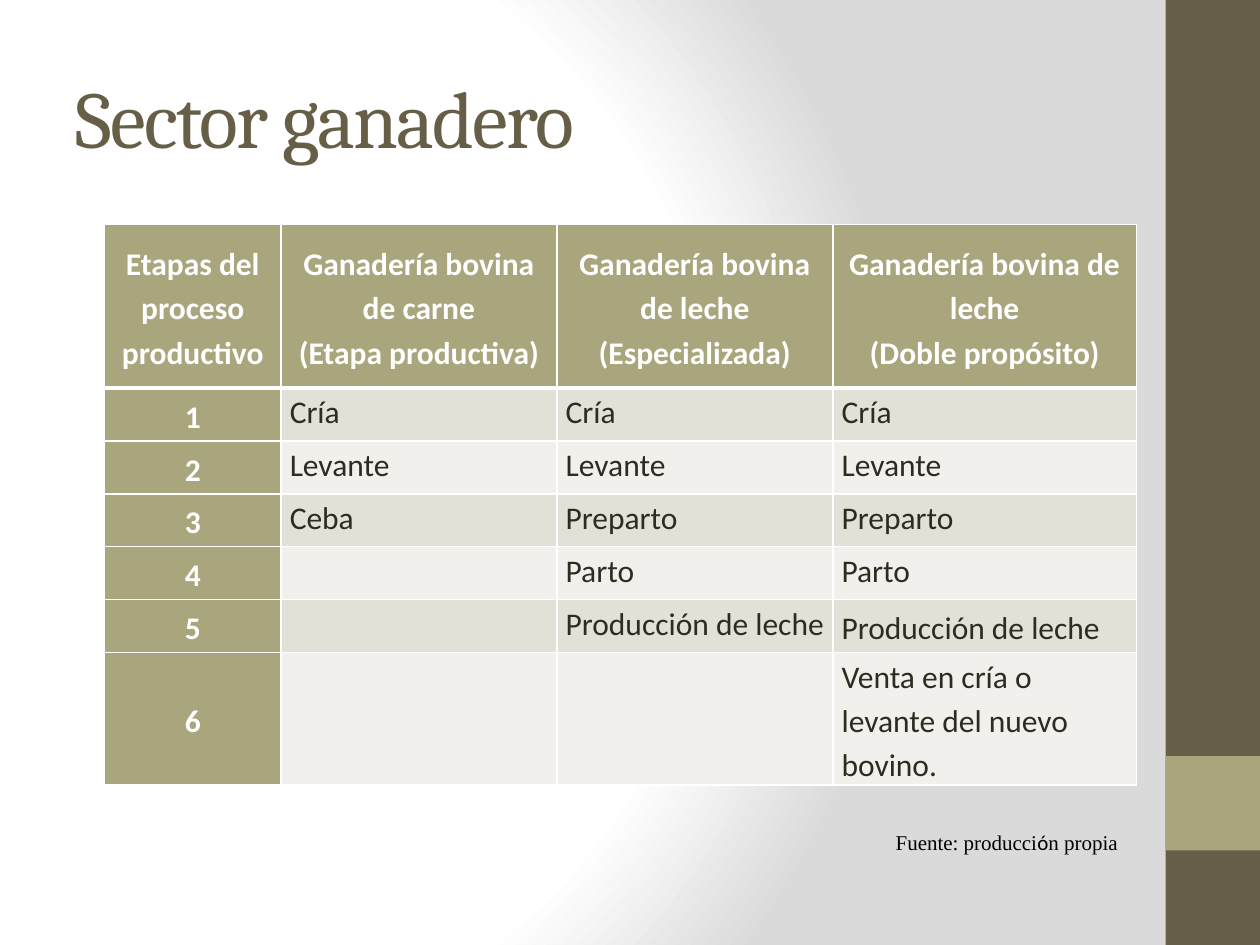
from pptx import Presentation
from pptx.dml.color import RGBColor
from pptx.enum.shapes import MSO_SHAPE
from pptx.enum.text import MSO_ANCHOR, MSO_AUTO_SIZE, PP_ALIGN
from pptx.oxml import parse_xml
from pptx.oxml.ns import nsdecls, qn
from pptx.util import Inches, Pt

RECT = MSO_SHAPE.RECTANGLE
TOP, MIDDLE = MSO_ANCHOR.TOP, MSO_ANCHOR.MIDDLE
LEFT, CENTER = PP_ALIGN.LEFT, PP_ALIGN.CENTER
RIGHT, JUSTIFY = PP_ALIGN.RIGHT, PP_ALIGN.JUSTIFY

BROWN = RGBColor(0x67, 0x5E, 0x47)
OLIVE = RGBColor(0xA9, 0xA5, 0x7C)
INK = RGBColor(0x2F, 0x2B, 0x20)
WHITE = RGBColor(0xFF, 0xFF, 0xFF)
BLACK = RGBColor(0, 0, 0)
BANDS = (RGBColor(0xE2, 0xE1, 0xD7), RGBColor(0xF1, 0xF0, 0xEC))

WIDTH, HEIGHT = 10, 7.5
COLS = (1.4, 2.19, 2.19, 2.41)
ROWS = (1.3, 0.42, 0.42, 0.42, 0.42, 0.42, 0.86)
HEAD = (
    "Etapas del proceso productivo",
    "Ganadería bovina de carne\n(Etapa productiva)",
    "Ganadería bovina de leche (Especializada)",
    "Ganadería bovina de leche\n(Doble propósito)",
)
STAGES = (
    ("Cría", "Cría", "Cría"),
    ("Levante", "Levante", "Levante"),
    ("Ceba", "Preparto", "Preparto"),
    ("", "Parto", "Parto"),
    ("", "Producción de leche", "Producción de leche"),
    ("", "", "Venta en cría o levante del nuevo bovino."),
)


def inches(box):
    return [Inches(v) for v in box]


def write(frame, text, font="Calibri", size=18, color=INK, bold=False,
          align=LEFT, gap=None):
    """Fill a frame; text is a string or a list of (string, font) runs."""
    parts = [[(line, font)] for line in text.split("\n")] \
        if isinstance(text, str) else [text]
    for i, runs in enumerate(parts):
        para = frame.add_paragraph() if i else frame.paragraphs[0]
        para.alignment, para.line_spacing = align, gap
        for words, face in runs:
            run = para.add_run()
            run.text = words
            run.font.name, run.font.size = face, Pt(size)
            run.font.bold, run.font.color.rgb = bold, color


def backdrop(slide):
    fill = slide.background.fill
    fill.gradient()
    grad = next(slide.element.iter(qn("a:gradFill")))
    stops = "".join(
        f'<a:gs pos="{pos * 1000}"><a:srgbClr val="{color}"/></a:gs>'
        for pos, color in ((0, "FFFFFF"), (75, "FFFFFF"), (100, "DADADA")))
    grad.getparent().replace(grad, parse_xml(
        f'<a:gradFill {nsdecls("a")} rotWithShape="1"><a:gsLst>{stops}</a:gsLst>'
        '<a:path path="circle"><a:fillToRect l="20000" t="50000" '
        'r="100000" b="50000"/></a:path></a:gradFill>'))


def sidebar(slide, box):
    """Draw the side band with a square accent at four fifths of its height."""
    left, top, width, height = box
    accent = (left, top + height * 0.8, width, width)
    for area, color in ((box, BROWN), (accent, OLIVE)):
        bar = slide.shapes.add_shape(RECT, *inches(area))
        bar.shadow.inherit = False
        bar.fill.solid()
        bar.fill.fore_color.rgb = color
        bar.line.fill.background()


def heading(slide, box):
    title = slide.shapes.title
    title.left, title.top, title.width, title.height = inches(box)
    frame = title.text_frame
    frame.auto_size = MSO_AUTO_SIZE.NONE
    frame.vertical_anchor = MIDDLE
    write(frame, "Sector ganadero", font="Cambria", size=46, color=BROWN)
    for run in frame.paragraphs[0].runs:
        run.font._element.set("spc", "-100")


def border(cell, base):
    props = cell._tc.get_or_add_tcPr()
    for side, width in (("L", 1), ("R", 1), ("T", 1), ("B", base)):
        props.append(parse_xml(
            f'<a:ln{side} {nsdecls("a")} w="{Pt(width)}"><a:solidFill>'
            f'<a:srgbClr val="{WHITE}"/></a:solidFill></a:ln{side}>'))


def dress(cell, text, row, col):
    head, label = row == 0, row == 0 or col == 0
    border(cell, 3 if head else 1)
    cell.fill.solid()
    cell.fill.fore_color.rgb = OLIVE if label else BANDS[(row - 1) % 2]
    cell.margin_left = cell.margin_right = Inches(0.07)
    cell.margin_top = cell.margin_bottom = 0
    tall = col == 3 and row >= 5
    cell.vertical_anchor = MIDDLE if label or tall else TOP
    align = CENTER if label else LEFT if tall else JUSTIFY
    if text:
        write(cell.text_frame, text, color=WHITE if label else INK,
              bold=label, align=align, gap=1.15)


def grid(slide, left, top):
    data = [HEAD] + [(str(n), *row) for n, row in enumerate(STAGES, 1)]
    box = inches((left, top, sum(COLS), sum(ROWS)))
    table = slide.shapes.add_table(len(ROWS), len(COLS), *box).table
    table.first_col = True
    for col, width in zip(table.columns, COLS):
        col.width = Inches(width)
    for row, height in zip(table.rows, ROWS):
        row.height = Inches(height)
    for r, row in enumerate(data):
        for c, text in enumerate(row):
            dress(table.cell(r, c), text, r, c)


def credit(slide, box):
    frame = slide.shapes.add_textbox(*inches(box)).text_frame
    frame.word_wrap = True
    frame.auto_size = MSO_AUTO_SIZE.SHAPE_TO_FIT_TEXT
    frame.vertical_anchor = MIDDLE
    serif = "Times New Roman"
    write(frame, [("Fuente: producci", serif), ("ó", "Calibri"),
                  ("n propia", serif)], size=12, color=BLACK, align=RIGHT)


def main():
    deck = Presentation()
    deck.slide_width, deck.slide_height = Inches(WIDTH), Inches(HEIGHT)
    slide = deck.slides.add_slide(deck.slide_layouts[5])
    backdrop(slide)
    band = HEIGHT / 10
    sidebar(slide, (WIDTH - band, 0, band, HEIGHT))
    heading(slide, (0.5, 0.3, 8.33, 1.25))
    grid(slide, 0.83, 1.78)
    credit(slide, (0.86, 6.53, 8.11, 0.3))
    deck.save("out.pptx")


if __name__ == "__main__":
    main()
